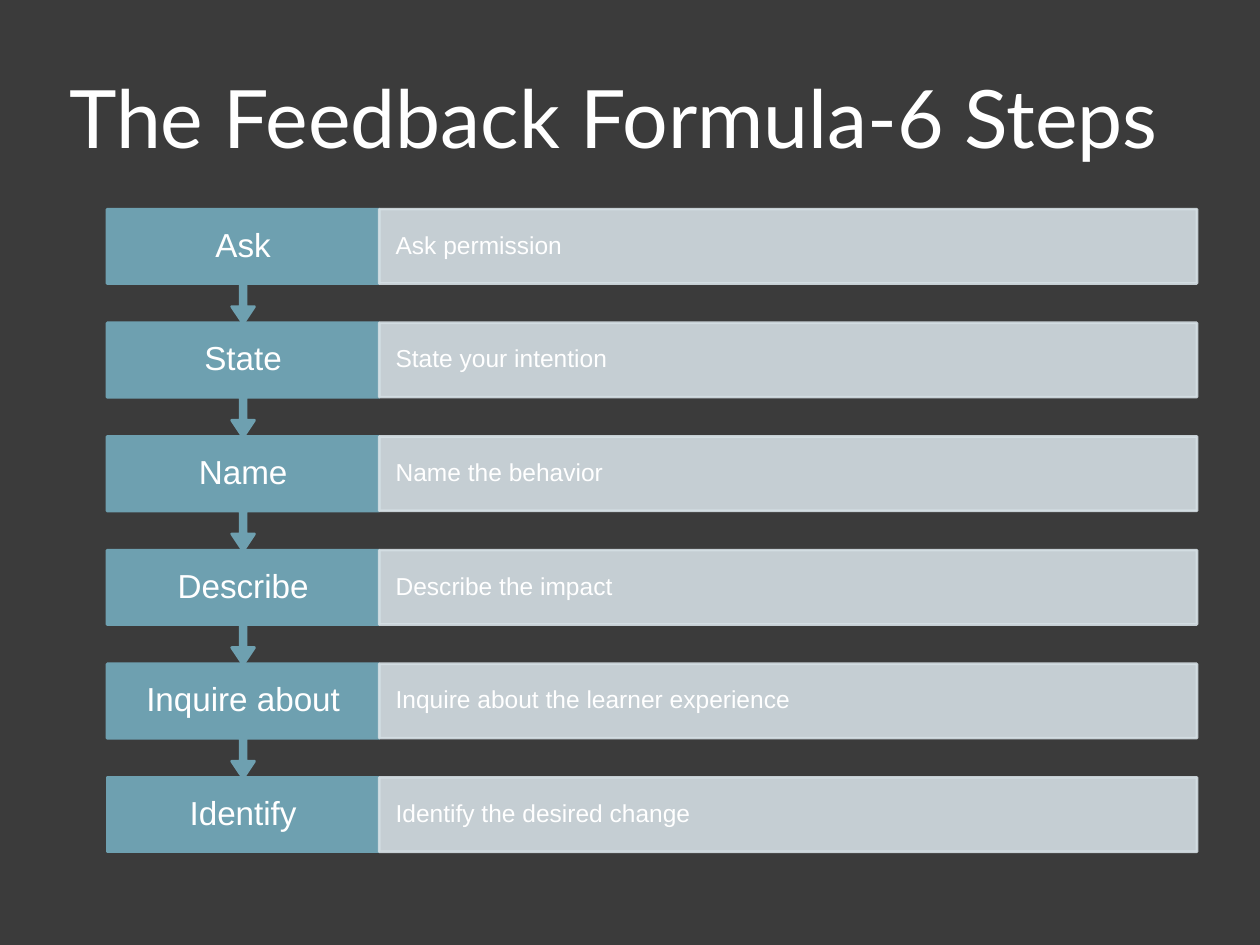
"""Build a slide with six feedback steps as a chain of callouts."""
import pptx
import pptx.util
import pptx.dml.color
import pptx.enum.shapes
import pptx.enum.text
import lxml.etree

TITLE = "The Feedback Formula-6 Steps"
STEPS = [
    ("Ask", "Ask permission"),
    ("State", "State your intention"),
    ("Name", "Name the behavior"),
    ("Describe", "Describe the impact"),
    ("Inquire about", "Inquire about the learner experience"),
    ("Identify", "Identify the desired change"),
]
COLORS = {"back": "3B3B3B", "step": "6EA0B0", "bar": "D5DFE4", "text": "FFFFFF"}
WIDE, HIGH = 10, 7.5
LEFT, TOP, PITCH = 0.85, 1.66, 0.902
STEP_W, BAR_W, ROW_H, CALL_H = 2.16, 6.49, 0.59, 0.91
ARROW = (0.05, 0.1, 0.15, 0.65)

Inches, Pt = pptx.util.Inches, pptx.util.Pt
Kind = pptx.enum.shapes.MSO_SHAPE
Align = pptx.enum.text.PP_ALIGN


def color(name):
    return pptx.dml.color.RGBColor.from_string(COLORS[name])


def write(shape, text, size, font, align, pad):
    frame = shape.text_frame
    frame.text = text
    frame.word_wrap = True
    frame.vertical_anchor = pptx.enum.text.MSO_ANCHOR.MIDDLE
    frame.margin_left = frame.margin_right = Inches(pad[0])
    frame.margin_top = frame.margin_bottom = Inches(pad[1])
    line = frame.paragraphs[0]
    line.alignment = align
    face = line.runs[0].font
    face.name, face.size = font, Pt(size)
    face.color.rgb = color("text")
    return line


def block(slide, kind, box, name, text, size, align, pad):
    shape = slide.shapes.add_shape(kind, *map(Inches, box))
    shape.shadow.inherit = False
    shape.fill.solid()
    shape.fill.fore_color.rgb = color(name)
    shape.line.color.rgb = color(name)
    shape.line.width = Pt(1.5)
    write(shape, text, size, "Arial", align, pad).line_spacing = 0.9
    return shape


def fade(shape, share):
    tag = "{http://schemas.openxmlformats.org/drawingml/2006/main}"
    for node in shape.element.spPr.iter(tag + "srgbClr"):
        lxml.etree.SubElement(node, tag + "alpha", val=str(share * 1000))


def main():
    deck = pptx.Presentation()
    deck.slide_width, deck.slide_height = Inches(WIDE), Inches(HIGH)
    slide = deck.slides.add_slide(deck.slide_layouts[6])
    slide.background.fill.solid()
    slide.background.fill.fore_color.rgb = color("back")

    head = slide.shapes.add_textbox(*map(Inches, (0.5, 0.3, 9, 1.25)))
    write(head, TITLE, 46, "Lato", Align.LEFT, (0.05, 0.05))

    last = len(STEPS) - 1
    for row, (step, note) in reversed(list(enumerate(STEPS))):
        top = TOP + row * PITCH
        kind = Kind.RECTANGLE if row == last else Kind.DOWN_ARROW_CALLOUT
        high = ROW_H if row == last else CALL_H
        call = block(slide, kind, (LEFT, top, STEP_W, high), "step",
                     step, 19, Align.CENTER, (0.15, 0.15))
        if row < last:
            for spot, share in enumerate(ARROW):
                call.adjustments[spot] = share
        bar = block(slide, Kind.RECTANGLE, (LEFT + STEP_W, top, BAR_W, ROW_H),
                    "bar", note, 14, Align.LEFT, (0.13, 0.19))
        fade(bar, 90)

    deck.save("out.pptx")


if __name__ == "__main__":
    main()
